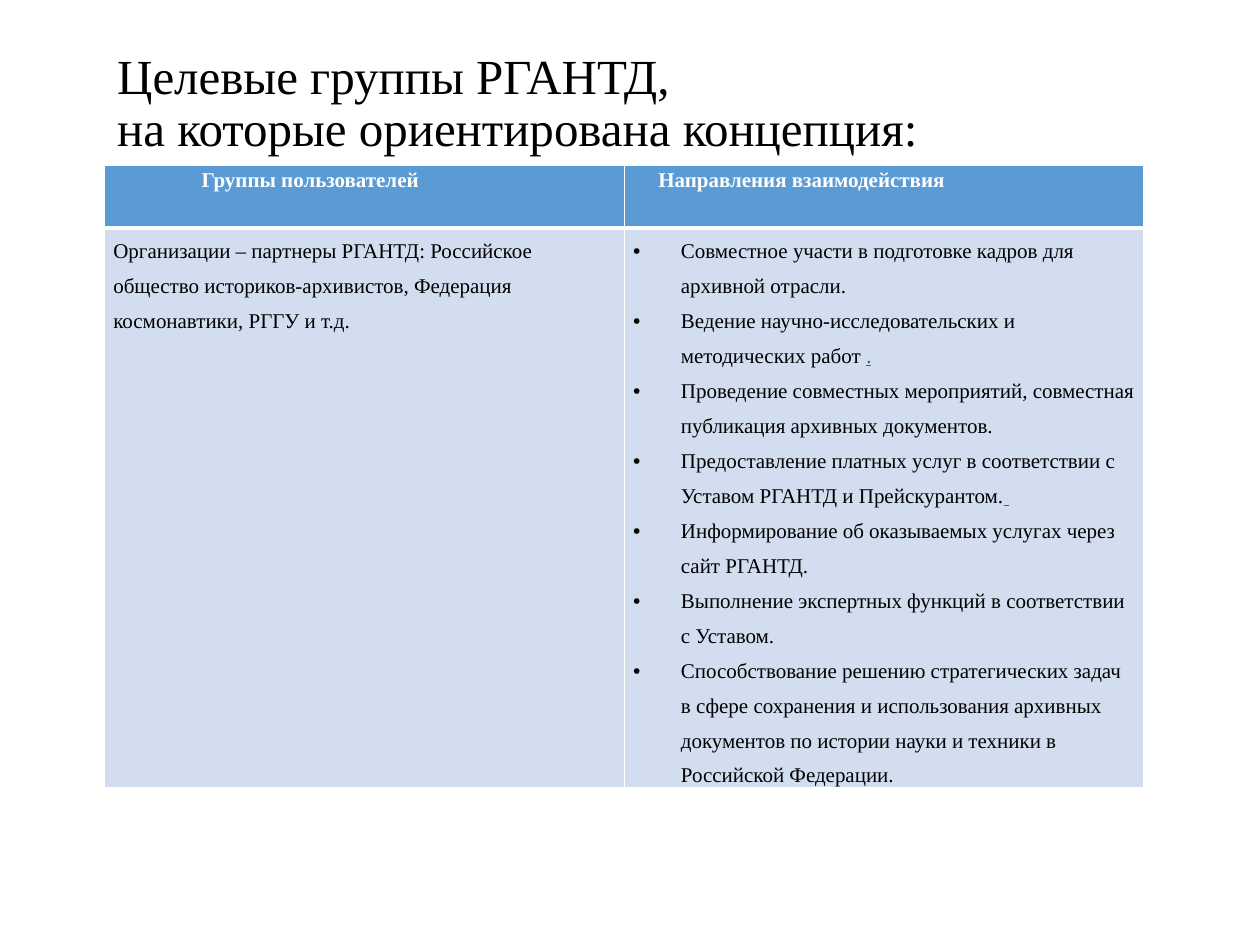
from lxml.etree import SubElement
from pptx import Presentation
from pptx.dml.color import RGBColor
from pptx.enum.text import MSO_ANCHOR, MSO_AUTO_SIZE, PP_ALIGN
from pptx.oxml import parse_xml
from pptx.oxml.ns import nsdecls, qn
from pptx.util import Inches, Pt

COLORS = {
    "text": "000000",
    "white": "FFFFFF",
    "header": "5B9BD5",
    "body": "D2DEEF",
    "accent": "008080",
}
FONT = "Times New Roman"
TITLE_LINES = ["Целевые группы РГАНТД, ", "на которые ориентирована концепция:"]
HEADERS = [("Группы пользователей", 0.5), ("Направления взаимодействия", 0)]
PARTNERS = (
    "Организации – партнеры РГАНТД: Российское общество историков-архивистов, "
    "Федерация космонавтики, РГГУ и т.д."
)
DIRECTIONS = [
    ("Совместное участи в подготовке кадров для архивной отрасли.", ""),
    ("Ведение научно-исследовательских и методических работ ", "."),
    ("Проведение совместных мероприятий, совместная публикация архивных документов.", ""),
    ("Предоставление платных услуг в соответствии с Уставом РГАНТД и Прейскурантом.", " "),
    ("Информирование об оказываемых услугах через сайт РГАНТД.", ""),
    ("Выполнение экспертных функций в соответствии с Уставом.", ""),
    ("Способствование решению стратегических задач в сфере сохранения и использования "
     "архивных документов по истории науки и техники в Российской Федерации.", ""),
]


def add_run(paragraph, text, color="text", size=12, bold=False, underline=False):
    run = paragraph.add_run()
    run.text = text
    run.font.name = FONT
    run.font.size = Pt(size)
    run.font.bold = bold
    run.font.underline = underline
    run.font.color.rgb = RGBColor.from_string(COLORS[color])


def set_indent(paragraph, left, first, bullet=False):
    properties = paragraph._p.get_or_add_pPr()
    properties.set("marL", str(Inches(left)))
    properties.set("indent", str(Inches(first)))
    if bullet:
        SubElement(properties, qn("a:buFont")).set("typeface", "Arial")
        SubElement(properties, qn("a:buChar")).set("char", "•")


def format_cell(cell, fill, bottom_width):
    cell.margin_left = cell.margin_right = Inches(0.07)
    cell.margin_top = cell.margin_bottom = 0
    cell.vertical_anchor = MSO_ANCHOR.TOP
    cell.fill.solid()
    cell.fill.fore_color.rgb = RGBColor.from_string(COLORS[fill])
    widths = {"lnL": 1, "lnR": 1, "lnT": bottom_width if fill == "body" else 1,
              "lnB": bottom_width if fill == "header" else 1}
    if fill == "body":
        widths["lnT"] = 3
    for index, (side, width) in enumerate(widths.items()):
        border = parse_xml(
            f'<a:{side} {nsdecls("a")} w="{Pt(width)}"><a:solidFill>'
            f'<a:srgbClr val="{COLORS["white"]}"/></a:solidFill></a:{side}>'
        )
        cell._tc.get_or_add_tcPr().insert(index, border)


def add_title(slide, left, top, width, height):
    title = slide.shapes.title
    title.left, title.top, title.width, title.height = left, top, width, height
    frame = title.text_frame
    frame.auto_size = MSO_AUTO_SIZE.NONE
    frame.word_wrap = True
    frame.vertical_anchor = MSO_ANCHOR.MIDDLE
    paragraph = frame.paragraphs[0]
    paragraph.alignment = PP_ALIGN.LEFT
    paragraph.line_spacing = 0.9
    for index, line in enumerate(TITLE_LINES):
        if index:
            paragraph.add_line_break()
        add_run(paragraph, line, size=28)


def add_groups_table(slide, left, top, width, header_height, body_height):
    table = slide.shapes.add_table(
        2, 2, left, top, width, header_height + body_height
    ).table
    table.rows[0].height = header_height
    table.rows[1].height = body_height

    for column, (text, indent) in enumerate(HEADERS):
        cell = table.cell(0, column)
        format_cell(cell, "header", 3)
        paragraph = cell.text_frame.paragraphs[0]
        set_indent(paragraph, indent, 0.2)
        paragraph.line_spacing = 1.15
        add_run(paragraph, text, "white", bold=True)
        format_cell(table.cell(1, column), "body", 1)

    paragraph = table.cell(1, 0).text_frame.paragraphs[0]
    paragraph.line_spacing = 1.5
    add_run(paragraph, PARTNERS)

    frame = table.cell(1, 1).text_frame
    for index, (text, accent) in enumerate(DIRECTIONS):
        paragraph = frame.add_paragraph() if index else frame.paragraphs[0]
        set_indent(paragraph, 0.38, -0.38, bullet=True)
        paragraph.line_spacing = 1.5
        add_run(paragraph, text)
        if accent:
            add_run(paragraph, accent, "accent", underline=True)


def main():
    presentation = Presentation()
    presentation.slide_width = Inches(10)
    presentation.slide_height = Inches(7.5)
    slide = presentation.slides.add_slide(presentation.slide_layouts[5])
    add_title(slide, Inches(0.83), Inches(0.36), Inches(8.27), Inches(0.94))
    add_groups_table(slide, Inches(0.83), Inches(1.31), Inches(8.25),
                     Inches(0.5), Inches(4.42))
    presentation.save("out.pptx")


if __name__ == "__main__":
    main()
